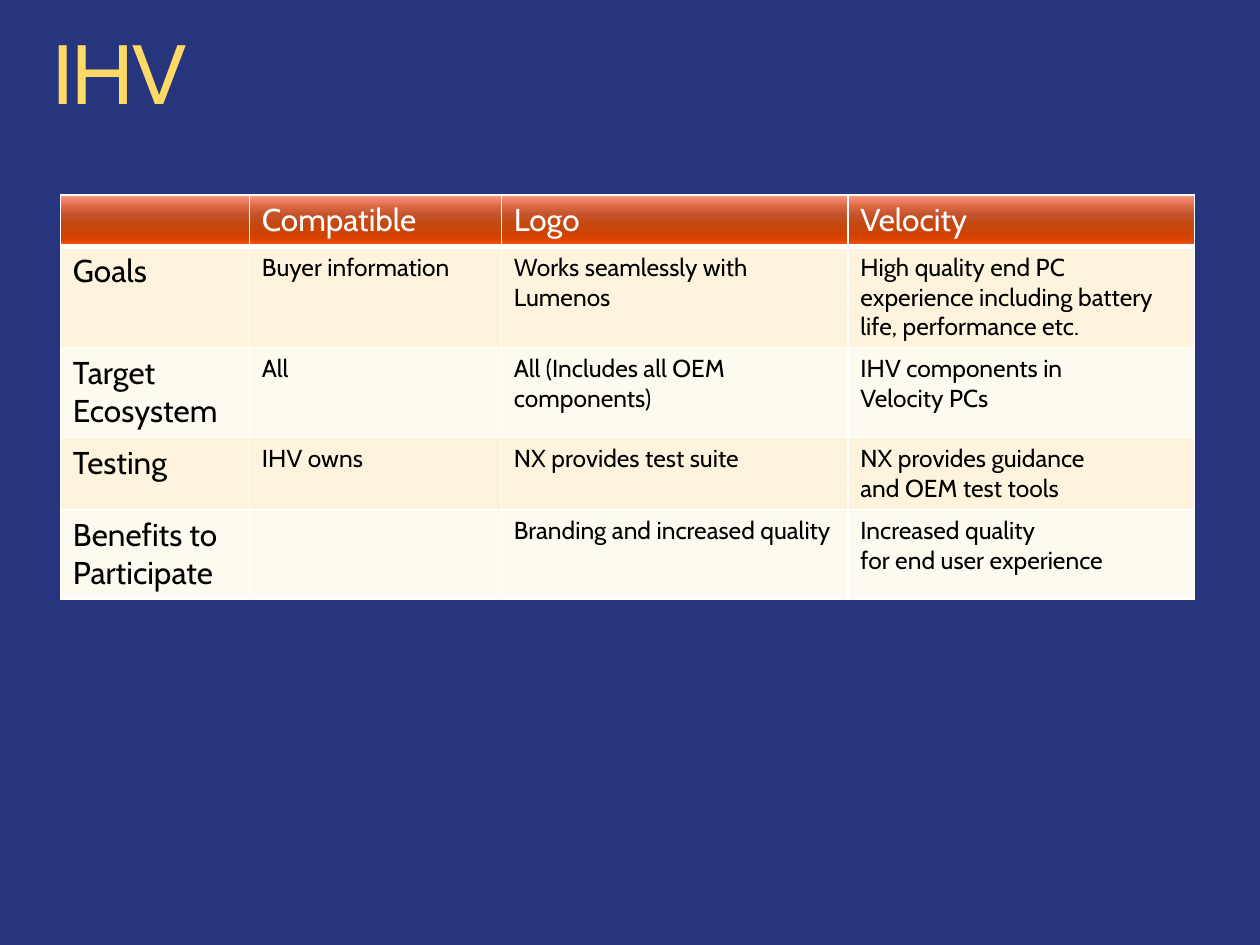
import pptx
import pptx.dml.color
import pptx.enum.text
import pptx.oxml
import pptx.oxml.ns
import pptx.util
from dataclasses import dataclass

Pt = pptx.util.Pt


@dataclass(frozen=True)
class Theme:
    font: str = "Cabin"
    background: str = "26357E"
    white: str = "FFFFFF"
    black: str = "000000"
    bands: tuple = ("FEF4DE", "FFFAEF")
    title_gradient: tuple = ((0, "FFF2CC"), (41, "FFD966"), (100, "FFC000"))
    header_gradient: tuple = (
        (0, "FF9782"), (25, "D6643E"), (38, "C5532C"), (55, "C44911"),
        (80, "D34200"), (88, "DE4500"), (100, "FF5C16"))
    title_size: int = 48
    heading_size: int = 18
    body_size: int = 14
    border: int = 1
    header_border: int = 3


THEME = Theme()

COLUMN_WIDTHS = (108, 144, 198, 198)
ROW_HEIGHTS = (29.2, 58, 51.4, 41, 51.4)
ROWS = (
    ("", "Compatible", "Logo", "Velocity"),
    ("Goals", "Buyer information", "Works seamlessly with Lumenos",
     "High quality end PC experience including battery life, performance etc."),
    ("Target Ecosystem", "All", "All (Includes all OEM components)",
     "IHV components in \nVelocity PCs"),
    ("Testing", "IHV owns", "NX provides test suite",
     "NX provides guidance\nand OEM test tools"),
    ("Benefits to Participate", "", "Branding and increased quality",
     "Increased quality\nfor end user experience"),
)


def rgb(color):
    return pptx.dml.color.RGBColor.from_string(color)


def gradient_fill(stops):
    """Return a top-to-bottom gradient element."""
    marks = "".join(
        f'<a:gs pos="{position * 1000}"><a:srgbClr val="{color}"/></a:gs>'
        for position, color in stops)
    return pptx.oxml.parse_xml(
        f'<a:gradFill {pptx.oxml.ns.nsdecls("a")} rotWithShape="1">'
        f'<a:gsLst>{marks}</a:gsLst><a:lin ang="5400000" scaled="0"/></a:gradFill>')


def write_text(text_frame, text, *, size, color=None, gradient=None,
               line_spacing=None, tracking=None):
    """Fill the first paragraph; a newline becomes a line break."""
    paragraph = text_frame.paragraphs[0]
    if line_spacing:
        paragraph.line_spacing = line_spacing
    for index, line in enumerate(text.split("\n")):
        if index:
            paragraph.add_line_break()
        run = paragraph.add_run()
        run.text = line
        run.font.size = Pt(size)
        run.font.name = THEME.font
        properties = run.font._element
        if gradient:
            properties.insert(0, gradient_fill(gradient))
        else:
            run.font.color.rgb = rgb(color)
        if tracking:
            properties.set("spc", str(round(tracking * 100)))


def add_borders(cell, bottom_width):
    """Draw white lines around a cell; call before filling it."""
    widths = {"L": THEME.border, "R": THEME.border,
              "T": THEME.border, "B": bottom_width}
    for side, width in widths.items():
        cell._tc.get_or_add_tcPr().append(pptx.oxml.parse_xml(
            f'<a:ln{side} {pptx.oxml.ns.nsdecls("a")} w="{Pt(width)}">'
            f'<a:solidFill><a:srgbClr val="{THEME.white}"/></a:solidFill>'
            f'</a:ln{side}>'))


def add_title(slide, text, left, top, width, height):
    box = slide.shapes.add_textbox(Pt(left), Pt(top), Pt(width), Pt(height))
    frame = box.text_frame
    frame.word_wrap = True
    frame.auto_size = pptx.enum.text.MSO_AUTO_SIZE.SHAPE_TO_FIT_TEXT
    frame.margin_left = frame.margin_right = 0
    frame.margin_top = frame.margin_bottom = 0
    write_text(frame, text, size=THEME.title_size, gradient=THEME.title_gradient,
               line_spacing=0.9, tracking=-1.2)


def format_cell(cell, text, row, column):
    is_header = row == 0
    add_borders(cell, THEME.header_border if is_header else THEME.border)
    if is_header:
        cell._tc.get_or_add_tcPr().append(gradient_fill(THEME.header_gradient))
    else:
        cell.fill.solid()
        cell.fill.fore_color.rgb = rgb(THEME.bands[(row - 1) % 2])
    if text:
        is_heading = is_header or column == 0
        write_text(cell.text_frame, text,
                   size=THEME.heading_size if is_heading else THEME.body_size,
                   color=THEME.white if is_header else THEME.black)


def add_program_table(slide, left, top, width, height):
    table = slide.shapes.add_table(
        len(ROWS), len(COLUMN_WIDTHS), Pt(left), Pt(top), Pt(width), Pt(height)).table
    table.first_row = table.horz_banding = False
    for column, share in zip(table.columns, COLUMN_WIDTHS):
        column.width = Pt(width * share / sum(COLUMN_WIDTHS))
    for row, share in zip(table.rows, ROW_HEIGHTS):
        row.height = Pt(height * share / sum(ROW_HEIGHTS))
    for row, texts in enumerate(ROWS):
        for column, text in enumerate(texts):
            format_cell(table.cell(row, column), text, row, column)


def main():
    presentation = pptx.Presentation()
    presentation.slide_width, presentation.slide_height = Pt(720), Pt(540)
    slide = presentation.slides.add_slide(presentation.slide_layouts[6])
    slide.background.fill.solid()
    slide.background.fill.fore_color.rgb = rgb(THEME.background)

    # Title
    add_title(slide, "IHV", 30, 18, 660, 52.5)
    # Comparison of the three programs
    add_program_table(slide, 34.5, 111.5, sum(COLUMN_WIDTHS), sum(ROW_HEIGHTS))

    presentation.save("out.pptx")


if __name__ == "__main__":
    main()
